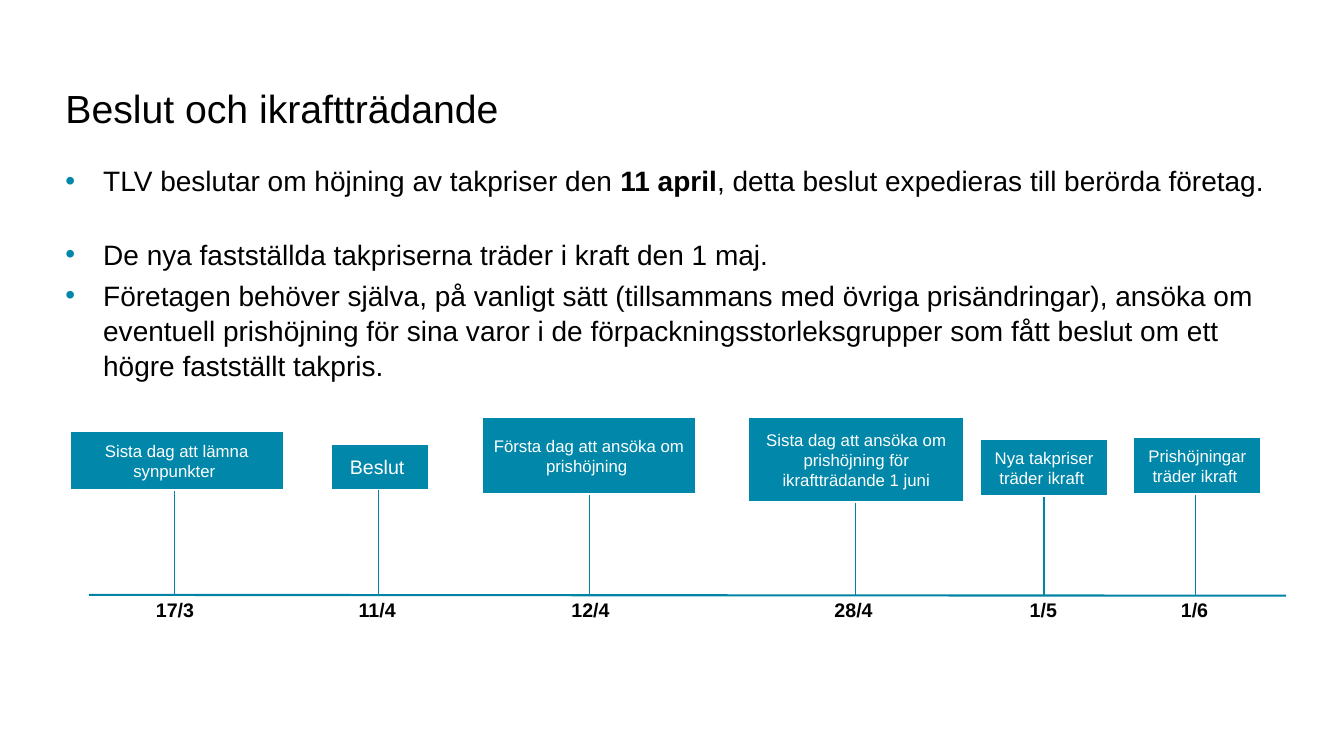
from collections import namedtuple
from dataclasses import dataclass

from lxml import etree
from pptx import Presentation
from pptx.dml.color import RGBColor
from pptx.enum import shapes, text
from pptx.oxml import ns
from pptx.util import Cm, Pt

TITLE = "Beslut och ikraftträdande"
BULLETS = [
    (0, [("TLV beslutar om höjning av takpriser den ", False),
         ("11 april", True),
         (", detta beslut expedieras till berörda företag.", False)]),
    (27.5, [("De nya fastställda takpriserna träder i kraft den 1 maj.", False)]),
    (4.6, [("Företagen behöver själva, på vanligt sätt (tillsammans med övriga "
            "prisändringar), ansöka om eventuell prishöjning för sina varor i de "
            "förpackningsstorleksgrupper som fått beslut om ett högre fastställt "
            "takpris.", False)]),
]

Milestone = namedtuple("Milestone", "label size left top width height stem date date_left")
MILESTONES = [
    Milestone("Sista dag att lämna synpunkter ", 12, 1.75, 10.85, 5.41, 1.52, 4.39, "17/3", 3.68),
    Milestone("Beslut ", 14, 8.33, 11.18, 2.49, 1.17, 9.55, "11/4", 8.79),
    Milestone("Första dag att ansöka om prishöjning ", 12, 12.14, 10.49, 5.41, 1.98, 14.86, "12/4", 14.15),
    Milestone("Sista dag att ansöka om prishöjning för ikraftträdande 1 juni", 12,
              18.85, 10.49, 5.46, 2.18, 21.56, "28/4", 20.78),
    Milestone("Nya takpriser träder ikraft ", 12, 24.69, 11.05, 3.25, 1.47, 26.31, "1/5", 25.7),
    Milestone("Prishöjningar träder ikraft ", 12, 28.55, 11, 3.25, 1.47, 30.12, "1/6", 29.51),
]
AXIS = (2.24, 14.99, 32.41, 15.01)
DATE_TOP, DATE_HEIGHT = 14.94, 0.86


@dataclass(frozen=True)
class Theme:
    font: str = "Arial"
    ink: str = "000000"
    paper: str = "FFFFFF"
    accent: str = "0087A9"
    rule: str = "0084A5"
    title: int = 28
    body: int = 20
    date: int = 14


THEME = Theme()


def write(para, words, size, color=THEME.ink, bold=False, align=text.PP_ALIGN.LEFT):
    para.alignment = align
    span = para.add_run()
    span.text = words
    span.font.name = THEME.font
    span.font.size = Pt(size)
    span.font.bold = bold
    span.font.color.rgb = RGBColor.from_string(color)


def place(box, left, top, width, height, anchor):
    box.left, box.top, box.width, box.height = Cm(left), Cm(top), Cm(width), Cm(height)
    frame = box.text_frame
    frame.margin_left = frame.margin_right = frame.margin_top = frame.margin_bottom = 0
    frame.vertical_anchor = anchor
    frame.auto_size = text.MSO_AUTO_SIZE.NONE
    frame.word_wrap = True
    return frame


def add_bullet(para):
    properties = para._p.get_or_add_pPr()
    properties.set("marL", str(Cm(0.95)))
    properties.set("indent", str(-Cm(0.95)))
    color = etree.SubElement(properties, ns.qn("a:buClr"))
    etree.SubElement(color, ns.qn("a:srgbClr"), val=THEME.accent)
    etree.SubElement(properties, ns.qn("a:buFont"), typeface=THEME.font)
    etree.SubElement(properties, ns.qn("a:buChar"), char="•")


def add_line(page, ends, weight):
    line = page.shapes.add_connector(shapes.MSO_CONNECTOR.STRAIGHT, *map(Cm, ends))
    line.line.color.rgb = RGBColor.from_string(THEME.rule)
    line.line.width = Pt(weight)
    etree.SubElement(line._element.spPr, ns.qn("a:effectLst"))


def add_milestone(page, item):
    box = page.shapes.add_shape(shapes.MSO_SHAPE.RECTANGLE, Cm(item.left), Cm(item.top),
                                Cm(item.width), Cm(item.height))
    box.shadow.inherit = False
    box.fill.solid()
    box.fill.fore_color.rgb = RGBColor.from_string(THEME.accent)
    box.line.color.rgb = RGBColor.from_string(THEME.paper)
    box.line.width = Pt(2)
    box.text_frame.word_wrap = True
    box.text_frame.vertical_anchor = text.MSO_ANCHOR.MIDDLE
    write(box.text_frame.paragraphs[0], item.label, item.size, color=THEME.paper,
          align=text.PP_ALIGN.CENTER)

    add_line(page, (item.stem, item.top + item.height, item.stem, AXIS[1]), 0.75)

    date_width = 0.33 * len(item.date) + 0.23
    date = page.shapes.add_textbox(Cm(item.date_left), Cm(DATE_TOP), Cm(date_width), Cm(DATE_HEIGHT))
    date.text_frame.word_wrap = True
    write(date.text_frame.paragraphs[0], item.date, THEME.date, bold=True)


def main():
    deck = Presentation()
    deck.slide_width, deck.slide_height = Cm(33.87), Cm(19.05)
    page = deck.slides.add_slide(deck.slide_layouts[1])

    heading = place(page.shapes.title, 1.65, 1.68, 30.56, 2.06, text.MSO_ANCHOR.MIDDLE)
    write(heading.paragraphs[0], TITLE, THEME.title)

    body = place(page.placeholders[1], 1.65, 4.09, 30.56, 13.06, text.MSO_ANCHOR.TOP)
    for index, (gap, spans) in enumerate(BULLETS):
        para = body.add_paragraph() if index else body.paragraphs[0]
        add_bullet(para)
        para.space_before = Pt(gap)
        para.line_spacing = 1.04
        for words, bold in spans:
            write(para, words, THEME.body, bold=bold)

    add_line(page, AXIS, 1.5)
    for item in MILESTONES:
        add_milestone(page, item)
    deck.save("out.pptx")


if __name__ == "__main__":
    main()
